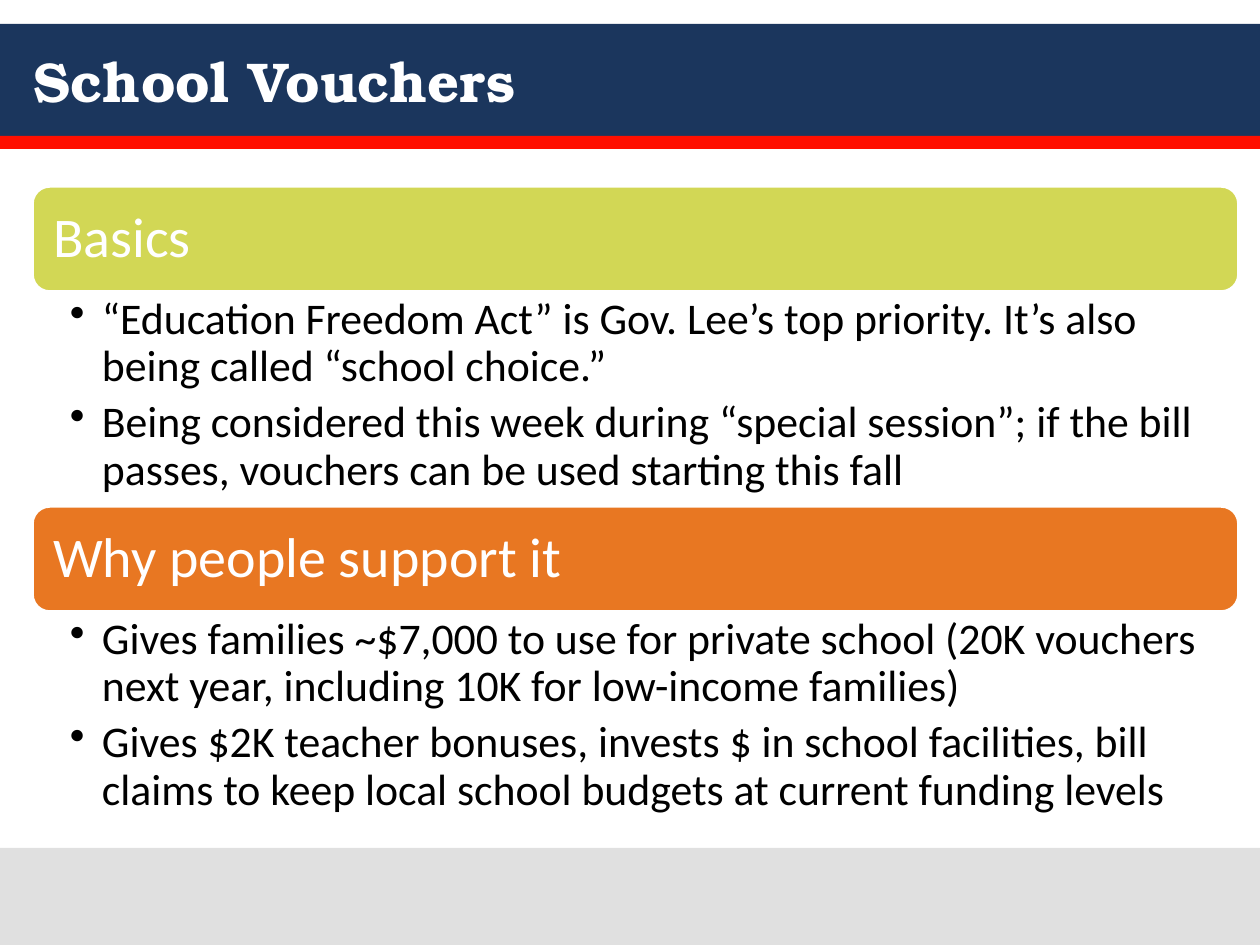
import pptx
import pptx.dml.color
import pptx.enum.shapes
import pptx.enum.text
import pptx.oxml.ns
import pptx.util
from lxml import etree

EMU_PER_PX = 914400 // 126
COLORS = {
    "navy": "1B365D",
    "red": "FF0F00",
    "footer": "E0E0E0",
    "lime": "D2D755",
    "orange": "E87722",
    "white": "FFFFFF",
    "black": "000000",
}
SECTIONS = [
    ("Basics", "lime", [
        "“Education Freedom Act” is Gov. Lee’s top priority. It’s also being called “school choice.”",
        "Being considered this week during “special session”; if the bill passes, "
        "vouchers can be used starting this fall",
    ]),
    ("Why people support it", "orange", [
        "Gives families ~$7,000 to use for private school (20K vouchers next year, "
        "including 10K for low-income families)",
        "Gives $2K teacher bonuses, invests $ in school facilities, bill claims to keep "
        "local school budgets at current funding levels",
    ]),
]
SLIDE_W, SLIDE_H = 1260, 945
SECTION_X, SECTION_W = 32, 1207
SECTION_TOP, SECTION_PITCH = 186, 320
HEADING_H, BODY_H = 106, 214
INDENT = 32


def px(n):
    return pptx.util.Emu(n * EMU_PER_PX)


def rgb(name):
    return pptx.dml.color.RGBColor.from_string(COLORS[name])


def add_box(slide, kind, x, y, w, h, fill):
    s = slide.shapes.add_shape(kind, px(x), px(y), px(w), px(h))
    s.shadow.inherit = False
    s.fill.solid()
    s.fill.fore_color.rgb = rgb(fill)
    s.line.fill.background()
    return s


def add_band(slide, y, h, fill):
    add_box(slide, pptx.enum.shapes.MSO_SHAPE.RECTANGLE, 0, y, SLIDE_W, h, fill)


def set_frame(tf, left, top, right, bottom, anchor):
    tf.word_wrap = True
    tf.margin_left, tf.margin_top = px(left), px(top)
    tf.margin_right, tf.margin_bottom = px(right), px(bottom)
    tf.vertical_anchor = anchor


def style_runs(p, font, size, color, bold=False):
    p.alignment = pptx.enum.text.PP_ALIGN.LEFT
    for r in p.runs:
        r.font.name = font
        r.font.size = pptx.util.Pt(size)
        r.font.bold = bold
        r.font.color.rgb = rgb(color)


def add_bullet(p):
    """Give the paragraph a hanging bullet."""
    pPr = p._p.get_or_add_pPr()
    pPr.set("marL", str(px(INDENT)))
    pPr.set("indent", str(px(-INDENT)))
    etree.SubElement(pPr, pptx.oxml.ns.qn("a:buChar"), char="•")


def add_title(slide, text):
    s = slide.shapes.add_textbox(px(21), px(24), px(1218), px(113))
    tf = s.text_frame
    set_frame(tf, 13, 6, 13, 6, pptx.enum.text.MSO_ANCHOR.MIDDLE)
    tf.text = text
    style_runs(tf.paragraphs[0], "TeX Gyre Bonum", 32, "white", bold=True)


def add_heading(slide, y, text, fill):
    s = add_box(slide, pptx.enum.shapes.MSO_SHAPE.ROUNDED_RECTANGLE,
                SECTION_X, y, SECTION_W, HEADING_H, fill)
    s.line.color.rgb = rgb("white")
    s.line.width = pptx.util.Pt(2)
    tf = s.text_frame
    set_frame(tf, 16, 16, 16, 16, pptx.enum.text.MSO_ANCHOR.MIDDLE)
    tf.text = text
    p = tf.paragraphs[0]
    p.line_spacing = 0.9
    style_runs(p, "Calibri", 32, "white")


def add_bullets(slide, y, items):
    s = slide.shapes.add_textbox(px(SECTION_X), px(y), px(SECTION_W), px(BODY_H))
    tf = s.text_frame
    set_frame(tf, 38, 5, 32, 5, pptx.enum.text.MSO_ANCHOR.TOP)
    for i, item in enumerate(items):
        p = tf.add_paragraph() if i else tf.paragraphs[0]
        p.text = item
        p.level = 1
        p.line_spacing = 0.9
        p.space_after = pptx.util.Pt(5)
        add_bullet(p)
        style_runs(p, "Calibri", 25, "black")


def main():
    prs = pptx.Presentation()
    prs.slide_width, prs.slide_height = pptx.util.Inches(10), pptx.util.Inches(7.5)
    slide = prs.slides.add_slide(prs.slide_layouts[6])

    add_band(slide, 24, 112, "navy")
    add_band(slide, 136, 13, "red")
    add_band(slide, 848, SLIDE_H - 848, "footer")
    add_title(slide, "School Vouchers")
    for i, (heading, fill, items) in enumerate(SECTIONS):
        y = SECTION_TOP + i * SECTION_PITCH
        add_heading(slide, y, heading, fill)
        add_bullets(slide, y + HEADING_H, items)

    prs.save("out.pptx")


if __name__ == "__main__":
    main()
